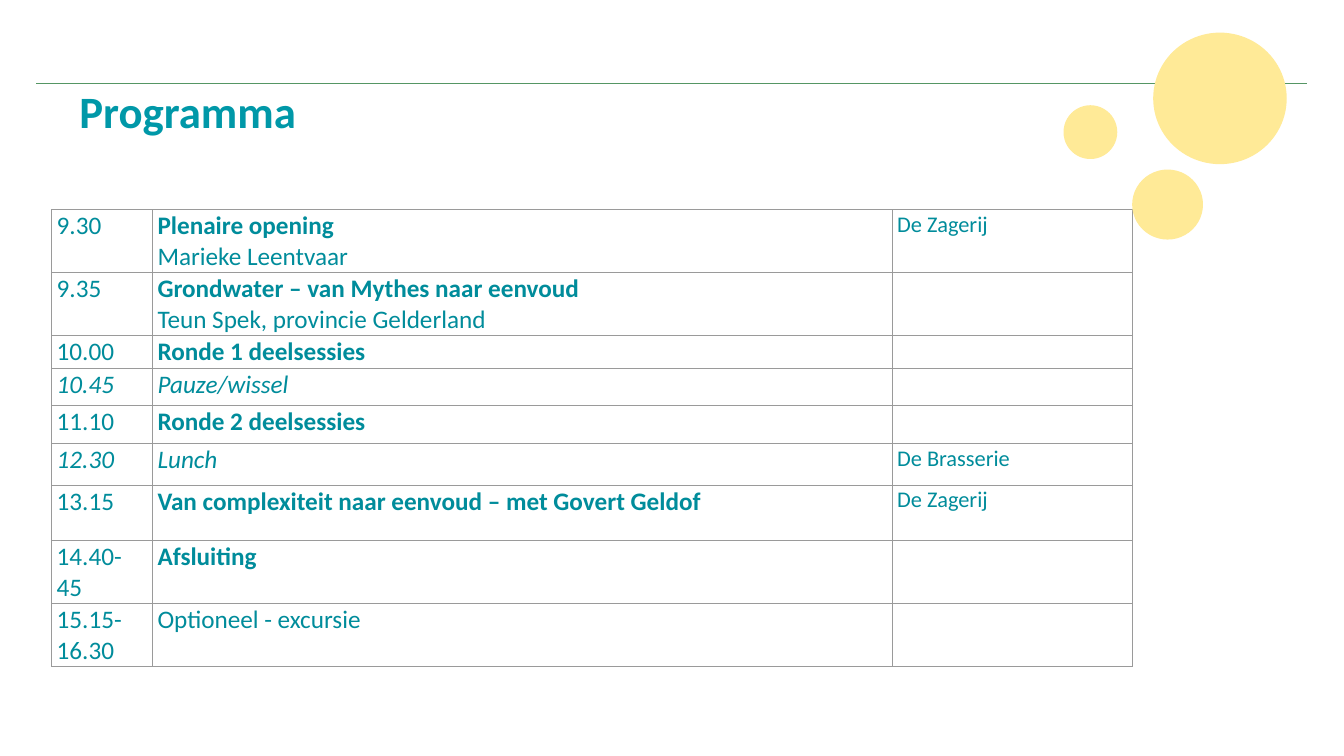
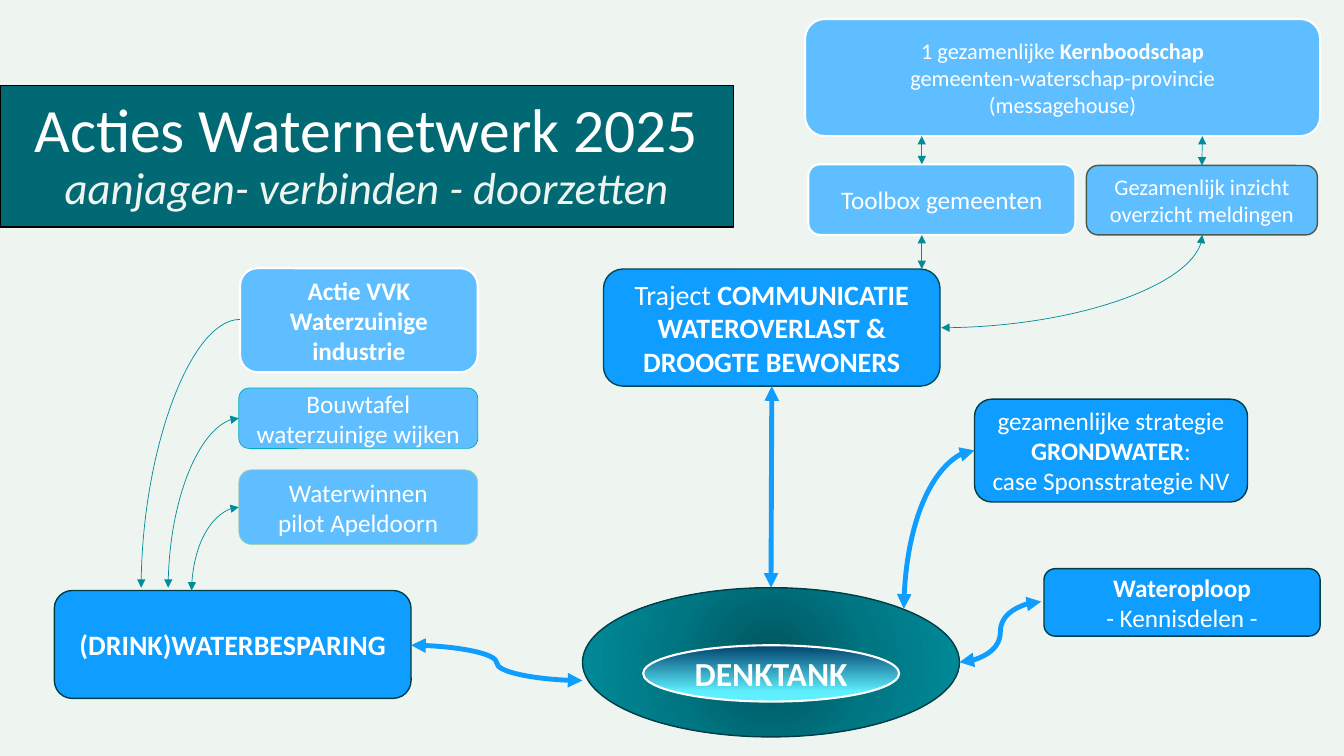
"""Build a programme slide and a map of water network actions."""
from pptx import Presentation
from pptx.dml.color import RGBColor
from pptx.enum import shapes, text
from pptx.oxml import parse_xml
from pptx.oxml.ns import nsdecls, qn
from pptx.util import Cm, Pt

FONT = "Calibri"
WHITE = RGBColor(0xFF, 0xFF, 0xFF)
PALE = RGBColor(0xEE, 0xF4, 0xEF)
TEAL = RGBColor(0x00, 0x8C, 0x9B)
HEAD = RGBColor(0x00, 0x98, 0xA8)
BAND = RGBColor(0x00, 0x69, 0x74)
DARK = RGBColor(0x00, 0x3D, 0x44)
DEEP = RGBColor(0x00, 0x4B, 0x53)
BLACK = RGBColor(0x00, 0x00, 0x00)
BLUE = RGBColor(0x0F, 0x9D, 0xFF)
SKY = RGBColor(0x5F, 0xBE, 0xFF)
AQUA = RGBColor(0x00, 0xAB, 0xBD)
MINT = RGBColor(0xA4, 0xD2, 0xB3)
MOSS = RGBColor(0x48, 0x5C, 0x4E)
GREEN = RGBColor(0x55, 0x96, 0x64)
GRAY = RGBColor(0x9A, 0x9A, 0x9A)
SUN = RGBColor(0xFF, 0xEA, 0x97)

KIND = shapes.MSO_SHAPE
LINK = shapes.MSO_CONNECTOR

WIDTHS = [2.54, 18.64, 6.07]
ROWS = [
    (1.59, "9.30", "", [("Plenaire opening", "b"), ("Marieke Leentvaar", "")], "De Zagerij"),
    (1.57, "9.35", "", [("Grondwater – van Mythes naar eenvoud", "b"),
                        ("Teun Spek, provincie Gelderland", "")], ""),
    (0.8, "10.00", "", [("Ronde 1 deelsessies", "b")], ""),
    (0.94, "10.45", "i", [("Pauze/wissel", "i")], ""),
    (0.96, "11.10", "", [("Ronde 2 deelsessies", "b")], ""),
    (1.05, "12.30", "i", [("Lunch", "i")], "De Brasserie"),
    (1.4, "13.15", "", [("Van complexiteit naar eenvoud – met Govert Geldof", "b")], "De Zagerij"),
    (1.58, "14.40-45", "", [("Afsluiting", "b")], ""),
    (1.58, "15.15-16.30", "", [("Optioneel - excursie", "")], ""),
]
DOTS = [(29.08, 0.84, 3.33, 3.28), (26.82, 2.67, 1.32, 1.32), (28.55, 4.29, 1.75, 1.73)]

CORE = [(0, "00535C"), (50, "007683"), (100, "008C9B")]
GLOW = [(0, "00416E"), (83, "5FF0FF"), (97, "5FF0FF"), (100, "94F5FF")]
ROUND = '<a:path path="circle"><a:fillToRect l="50000" t="50000" r="50000" b="50000"/></a:path>'
DOWN = '<a:lin ang="5400000" scaled="0"/>'

BOXES = {
    "actie": ((6.05, 6.76, 5.99, 2.62), SKY, WHITE, 1.5, 18,
              [[("Actie VVK Waterzuinige industrie", "b")]]),
    "traject": ((15.21, 6.78, 8.48, 2.95), BLUE, DEEP, 1, 20,
                [[("Traject ", ""), ("COMMUNICATIE WATEROVERLAST & DROOGTE BEWONERS", "b")]]),
    "oploop": ((26.31, 14.33, 6.96, 1.7), BLUE, DARK, 1, 18,
               [[("Wateroploop", "b")], [("- Kennisdelen -", "")]]),
    "bron": ((24.56, 10.06, 6.88, 2.59), BLUE, DARK, 1, 18,
             [[("gezamenlijke strategie ", ""), ("GRONDWATER", "b"), (":", "")],
              [("case Sponsstrategie NV", "")]]),
    "toolbox": ((20.37, 4.14, 6.73, 1.78), SKY, WHITE, 1.5, 18,
                [[("Toolbox gemeenten", "")]]),
    "kern": ((20.29, 0.48, 12.98, 2.95), SKY, WHITE, 1.5, 16,
             [[("1 gezamenlijke ", ""), ("Kernboodschap", "b")],
              [("gemeenten-waterschap-provincie", "")], [("(messagehouse)", "")]]),
    "inzicht": ((27.38, 4.17, 5.82, 1.75), SKY, MOSS, 1, 16,
                [[("Gezamenlijk inzicht overzicht meldingen", "")]]),
    "drink": ((1.37, 14.88, 8.99, 2.72), BLUE, DARK, 1, 20,
              [[("(DRINK)WATERBESPARING", "b")]]),
    "wijken": ((6.02, 9.78, 6.02, 1.52), SKY, AQUA, 0.5, 18,
               [[("Bouwtafel waterzuinige wijken", "")]]),
    "pilot": ((6.02, 11.84, 6.02, 1.88), SKY, MINT, 0.5, 18,
              [[("Waterwinnen", "")], [("pilot Apeldoorn", "")]]),
}

THIN, BOLD = (TEAL, 0.5), (BLUE, 3.5)
BENDS = [
    ((6.02, 10.54, 4.24, 14.81), THIN, 2, True),
    ((6.02, 12.78, 4.83, 14.88), THIN, 2, True),
    ((6.05, 8.05, 3.56, 14.81), THIN, 2, False),
    ((23.72, 8.26, 30.3, 5.92), THIN, 2, True),
    ((24.56, 11.35, 22.78, 15.34), BOLD, 2, True),
    ((10.36, 16.26, 14.68, 17.15), BOLD, 3, True),
    ((24.18, 16.69, 26.24, 15.16), BOLD, 3, True),
]
LINES = [
    ((23.23, 5.92, 23.23, 6.78), THIN, None, None),
    ((23.23, 3.43, 23.23, 4.14), THIN, None, None),
    ((30.3, 3.43, 30.3, 4.17), THIN, None, ("inzicht", 0)),
    ((19.45, 9.73, 19.45, 14.81), BOLD, ("traject", 2), ("core", 0)),
]


def write(para, runs, size, color, align=None):
    if align is not None:
        para.alignment = align
    para.font.size = Pt(size)
    for words, style in runs:
        run = para.add_run()
        run.text = words
        font = run.font
        font.name, font.size = FONT, Pt(size)
        font.bold, font.italic = "b" in style, "i" in style
        font.color.rgb = color


def fill(frame, paras, size, color, align=None):
    frame.word_wrap = True
    for n, runs in enumerate(paras):
        para = frame.add_paragraph() if n else frame.paragraphs[0]
        write(para, runs, size, color, align)


def shape(slide, kind, spot, tint, edge, width):
    item = slide.shapes.add_shape(kind, *map(Cm, spot))
    item.shadow.inherit = False
    if tint is not None:
        item.fill.solid()
        item.fill.fore_color.rgb = tint
    item.line.color.rgb = edge
    item.line.width = Pt(width)
    item.text_frame.vertical_anchor = text.MSO_ANCHOR.MIDDLE
    return item


def blend(item, stops, way):
    item.fill.gradient()
    old = item._element.spPr.find(qn("a:gradFill"))
    marks = "".join(f'<a:gs pos="{at * 1000}"><a:srgbClr val="{tint}"/></a:gs>'
                    for at, tint in stops)
    new = parse_xml(f'<a:gradFill {nsdecls("a")} rotWithShape="1">'
                    f'<a:gsLst>{marks}</a:gsLst>{way}</a:gradFill>')
    old.getparent().replace(old, new)


def join(slide, kind, ends, color, width, heads=()):
    wire = slide.shapes.add_connector(kind, *map(Cm, ends))
    wire.line.color.rgb = color
    wire.line.width = Pt(width)
    edge = wire.line._get_or_add_ln()
    for tag in heads:
        edge.append(parse_xml(f'<a:{tag} {nsdecls("a")} type="triangle"/>'))
    wire._element.spPr.append(parse_xml(f'<a:effectLst {nsdecls("a")}/>'))
    return wire


def start(deck, color):
    slide = deck.slides.add_slide(deck.slide_layouts[6])
    slide.background.fill.solid()
    slide.background.fill.fore_color.rgb = color
    return slide


def frame(cell):
    props = cell._tc.get_or_add_tcPr()
    for side in "LRTB":
        props.append(parse_xml(
            f'<a:ln{side} {nsdecls("a")} w="{Pt(0.75)}"><a:solidFill>'
            f'<a:srgbClr val="{GRAY}"/></a:solidFill></a:ln{side}>'))
    cell.fill.background()
    cell.margin_left = cell.margin_right = Cm(0.13)
    cell.margin_top = cell.margin_bottom = Cm(0.03)


def agenda(deck):
    slide = start(deck, WHITE)
    join(slide, LINK.STRAIGHT, (0.91, 2.1, 32.95, 2.1), GREEN, 0.5)
    title = slide.shapes.add_textbox(*map(Cm, (1.75, 1.98, 23.39, 3.18)))
    fill(title.text_frame, [[("Programma", "b")]], 32, HEAD)
    high = sum(row[0] for row in ROWS)
    spot = map(Cm, (1.3, 5.28, sum(WIDTHS), high))
    grid = slide.shapes.add_table(len(ROWS), len(WIDTHS), *spot).table
    grid.first_row = grid.horz_banding = False
    for col, width in zip(grid.columns, WIDTHS):
        col.width = Cm(width)
    for n, (tall, time, style, topic, place) in enumerate(ROWS):
        grid.rows[n].height = Cm(tall)
        parts = [([[(time, style)]], 18), ([[run] for run in topic], 18),
                 ([[(place, "")]] if place else [[]], 16)]
        for cell, (paras, size) in zip(grid.rows[n].cells, parts):
            frame(cell)
            fill(cell.text_frame, paras, size, TEAL)
    for dot in DOTS:
        shape(slide, KIND.OVAL, dot, SUN, SUN, 1)


def chart(deck):
    slide = start(deck, PALE)
    mid = text.PP_ALIGN.CENTER
    core = shape(slide, KIND.OVAL, (14.68, 14.81, 9.5, 3.76), None, DARK, 1)
    blend(core, CORE, ROUND)
    title = shape(slide, KIND.RECTANGLE, (0, 2.16, 18.49, 3.56), BAND, BLACK, 1).text_frame
    fill(title, [[("Acties Waternetwerk 2025", "")]], 44, WHITE, mid)
    write(title.add_paragraph(), [("aanjagen- verbinden - doorzetten", "i")], 32, PALE, mid)
    for para in title.paragraphs:
        para.line_spacing = 0.9
    tank = shape(slide, KIND.OVAL, (16.21, 16.26, 6.45, 1.42), None, WHITE, 1.5)
    blend(tank, GLOW, DOWN)
    fill(tank.text_frame, [[("DENKTANK", "b")]], 24, WHITE, mid)
    nodes = {"core": core}
    for name, (spot, tint, edge, width, size, paras) in BOXES.items():
        box = nodes[name] = shape(slide, KIND.ROUNDED_RECTANGLE, spot, tint, edge, width)
        fill(box.text_frame, paras, size, WHITE, mid)
    for ends, pen, form, both in BENDS:
        heads = ("headEnd", "tailEnd") if both else ("tailEnd",)
        wire = join(slide, LINK.CURVE, ends, *pen, heads)
        wire._element.spPr.find(qn("a:prstGeom")).set("prst", f"curvedConnector{form}")
    for ends, pen, first, last in LINES:
        wire = join(slide, LINK.STRAIGHT, ends, *pen, ("headEnd", "tailEnd"))
        if first:
            wire.begin_connect(nodes[first[0]], first[1])
        if last:
            wire.end_connect(nodes[last[0]], last[1])


def main():
    deck = Presentation()
    deck.slide_width, deck.slide_height = Cm(33.87), Cm(19.05)
    agenda(deck)
    chart(deck)
    deck.save("out.pptx")


if __name__ == "__main__":
    main()
